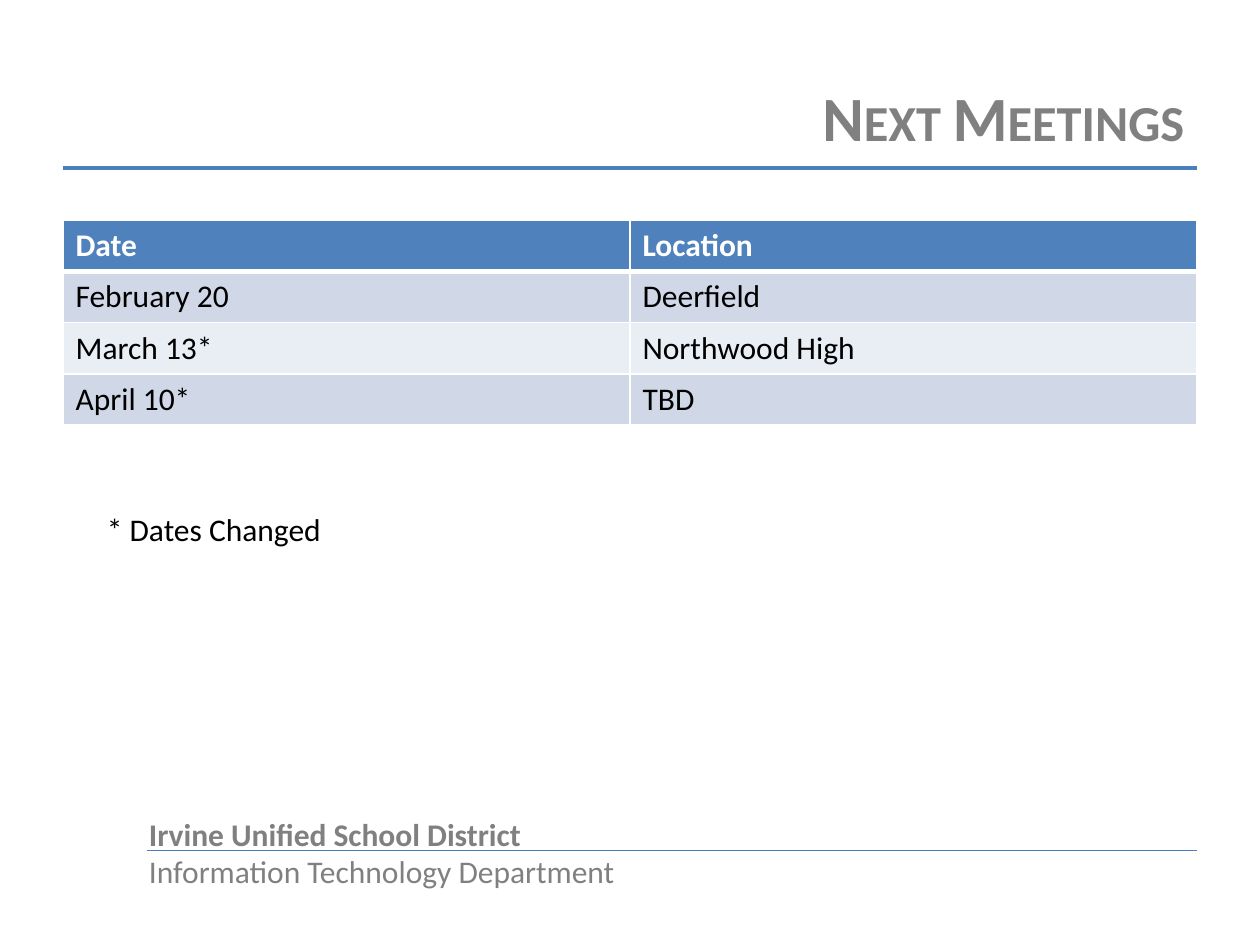
from dataclasses import dataclass

from lxml import etree
from pptx import Presentation
from pptx import util as u
from pptx.dml.color import RGBColor
from pptx.enum import shapes, text
from pptx.oxml.ns import qn

TITLE = "Next Meetings"
MEETINGS = [
    ("Date", "Location"),
    ("February 20", "Deerfield"),
    ("March 13*", "Northwood High"),
    ("April 10*", "TBD"),
]
NOTE = "* Dates Changed"
FOOTER = ["Irvine Unified School District", "Information Technology Department"]


@dataclass(frozen=True)
class Theme:
    font: str = "Calibri"
    title_size: float = 36
    body_size: float = 18
    grey: str = "808080"
    black: str = "000000"
    white: str = "FFFFFF"
    rule: str = "4B7EBC"
    header: str = "4F81BD"
    bands: tuple = ("D0D8E8", "E9EDF4")


THEME = Theme()
PAGE_WIDTH, PAGE_HEIGHT = 720, 540
MARGIN = 36
CONTENT_WIDTH = PAGE_WIDTH - 2 * MARGIN
ROW_HEIGHT = 29.2


def write(frame, lines, color, size=THEME.body_size, bold_lines=0, **formats):
    """Fill a text frame with one paragraph per line; the first bold_lines are bold."""
    for name, value in {"word_wrap": True, **formats}.items():
        setattr(frame, name, value)
    for index, line in enumerate(lines):
        para = frame.add_paragraph() if index else frame.paragraphs[0]
        span = para.add_run()
        span.text = line
        values = {"name": THEME.font, "size": u.Pt(size), "bold": index < bold_lines}
        for name, value in values.items():
            setattr(span.font, name, value)
        span.font.color.rgb = RGBColor.from_string(color)


def add_text(page, place, lines, color, **formats):
    box = page.shapes.add_textbox(*map(u.Pt, place))
    write(box.text_frame, lines, color, **formats)


def add_rule(page, left, top, right, weight):
    rule = page.shapes.add_connector(
        shapes.MSO_CONNECTOR.STRAIGHT, *map(u.Pt, (left, top, right, top)))
    rule.line.color.rgb = RGBColor.from_string(THEME.rule)
    rule.line.width = u.Pt(weight)
    etree.SubElement(rule._element.spPr, qn("a:effectLst"))


def add_borders(cell, weights):
    """Draw white cell borders, given as side letter to weight."""
    properties = cell._tc.get_or_add_tcPr()
    for side, weight in weights.items():
        border = etree.SubElement(properties, qn(f"a:ln{side}"), w=str(u.Pt(weight)))
        fill = etree.SubElement(border, qn("a:solidFill"))
        etree.SubElement(fill, qn("a:srgbClr"), val=THEME.white)


def add_title(page):
    title = page.shapes.title
    place = {"left": MARGIN, "top": 21.6, "width": CONTENT_WIDTH, "height": 90}
    for name, value in place.items():
        setattr(title, name, u.Pt(value))
    write(title.text_frame, [TITLE], THEME.grey, size=THEME.title_size, bold_lines=1,
          vertical_anchor=text.MSO_ANCHOR.MIDDLE)
    para = title.text_frame.paragraphs[0]
    para.alignment = text.PP_ALIGN.RIGHT
    para.runs[0].font._element.set("cap", "small")


def add_meetings(page):
    rows, columns = len(MEETINGS), len(MEETINGS[0])
    place = (MARGIN, 126, CONTENT_WIDTH, rows * ROW_HEIGHT)
    table = page.shapes.add_table(rows, columns, *map(u.Pt, place)).table
    for row, values in enumerate(MEETINGS):
        is_header = row == 0
        fill = THEME.header if is_header else THEME.bands[(row - 1) % 2]
        color = THEME.white if is_header else THEME.black
        for column, value in enumerate(values):
            cell = table.cell(row, column)
            add_borders(cell, {"L": 1, "R": 1, "T": 3 if row == 1 else 1,
                               "B": 3 if is_header else 1})
            cell.fill.solid()
            cell.fill.fore_color.rgb = RGBColor.from_string(fill)
            write(cell.text_frame, [value], color, bold_lines=int(is_header))


def main():
    deck = Presentation()
    deck.slide_width, deck.slide_height = u.Pt(PAGE_WIDTH), u.Pt(PAGE_HEIGHT)
    page = deck.slides.add_slide(deck.slide_layouts[5])
    right = PAGE_WIDTH - MARGIN
    add_text(page, (78, 462, 600, 73), FOOTER, THEME.grey, bold_lines=1)
    add_rule(page, 84, 486, right, 0.75)
    add_rule(page, MARGIN, 96, right, 2.5)
    add_title(page)
    add_meetings(page)
    add_text(page, (54, 288, 174, 29), [NOTE], THEME.black)
    deck.save("out.pptx")


if __name__ == "__main__":
    main()
